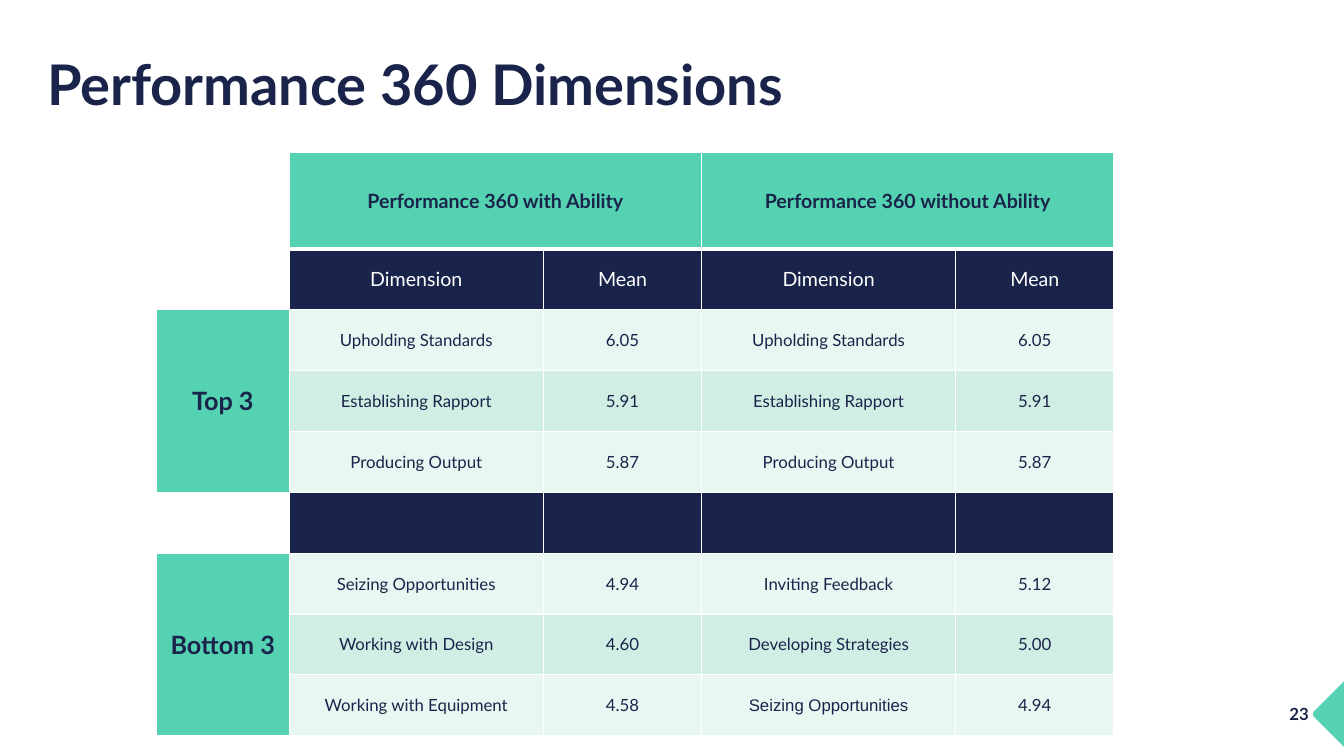
from lxml.etree import SubElement
from pptx import Presentation
from pptx.dml.color import RGBColor
from pptx.enum.text import MSO_ANCHOR, PP_ALIGN
from pptx.oxml.ns import qn
from pptx.util import Inches, Pt

TITLE = "Performance 360 Dimensions"
PAGE_NUMBER = "23"
GROUPS = ["Performance 360 with Ability", "Performance 360 without Ability"]
COLUMN_HEADS = ["Dimension", "Mean"] * 2
RANKINGS = {
    "Top 3": [
        ("Upholding Standards", "6.05", "Upholding Standards", "6.05"),
        ("Establishing Rapport", "5.91", "Establishing Rapport", "5.91"),
        ("Producing Output", "5.87", "Producing Output", "5.87"),
    ],
    "Bottom 3": [
        ("Seizing Opportunities", "4.94", "Inviting Feedback", "5.12"),
        ("Working with Design", "4.60", "Developing Strategies", "5.00"),
        ("Working with Equipment", "4.58", "Seizing Opportunities", "4.94"),
    ],
}
COLORS = {"navy": "1A244A", "mint": "55D2B1", "pale": "E9F7F2",
          "band": "D1EEE4", "white": "FFFFFF"}
FONT = "Lato"
COLUMN_WIDTHS = [1.32, 2.52, 1.57, 2.52, 1.57]
TABLE_LEFT, TABLE_TOP, TABLE_HEIGHT = 1.55, 1.51, 5.79
GROUP_HEIGHT = 0.96
ROW_COUNT = 9
FIRST_RANK_ROW = 2
MARKER_OUTLINE = [(13.33, 7.41), (13.03, 7.11), (13.02, 7.08), (13.03, 7.06), (13.33, 6.76)]


def rgb(name):
    return RGBColor.from_string(COLORS[name])


def write(frame, text, size, color="navy", bold=False, align=PP_ALIGN.CENTER, font=FONT):
    frame.text = text
    paragraph = frame.paragraphs[0]
    paragraph.alignment = align
    for run in paragraph.runs:
        run.font.name = font
        run.font.size = Pt(size)
        run.font.bold = bold
        run.font.color.rgb = rgb(color)
    return paragraph


def add_label(slide, box, text, size, align, anchor):
    label = slide.shapes.add_textbox(*map(Inches, box))
    label.text_frame.word_wrap = True
    label.text_frame.vertical_anchor = anchor
    return write(label.text_frame, text, size, bold=True, align=align)


def add_borders(cell, bottom_width):
    """Draw white cell borders; the XML must precede the cell's fill."""
    properties = cell._tc.get_or_add_tcPr()
    for side, width in (("L", 1), ("R", 1), ("T", 1), ("B", bottom_width)):
        line = SubElement(properties, qn(f"a:ln{side}"), w=str(Pt(width)))
        fill = SubElement(line, qn("a:solidFill"))
        SubElement(fill, qn("a:srgbClr"), val=COLORS["white"])


def fill_cell(cell, color):
    cell.fill.solid()
    cell.fill.fore_color.rgb = rgb(color)


def add_rankings(slide):
    table = slide.shapes.add_table(
        ROW_COUNT, len(COLUMN_WIDTHS), Inches(TABLE_LEFT), Inches(TABLE_TOP),
        Inches(sum(COLUMN_WIDTHS)), Inches(TABLE_HEIGHT)).table
    table.first_row = table.horz_banding = False
    for column, width in zip(table.columns, COLUMN_WIDTHS):
        column.width = Inches(width)
    row_height = (TABLE_HEIGHT - GROUP_HEIGHT) / (ROW_COUNT - 1)
    for r, row in enumerate(table.rows):
        row.height = Inches(row_height if r else GROUP_HEIGHT)
        for c, cell in enumerate(row.cells):
            add_borders(cell, 1 if r else 3)
            fill_cell(cell, "navy" if c else "white")
            cell.vertical_anchor = MSO_ANCHOR.MIDDLE

    for i, group in enumerate(GROUPS):
        left = 1 + 2 * i
        cell = table.cell(0, left)
        cell.merge(table.cell(0, left + 1))
        fill_cell(cell, "mint")
        write(cell.text_frame, group, 14, bold=True)
    for c, head in enumerate(COLUMN_HEADS, 1):
        write(table.cell(1, c).text_frame, head, 14, "white")

    top = FIRST_RANK_ROW
    for rank, rows in RANKINGS.items():
        rank_cell = table.cell(top, 0)
        rank_cell.merge(table.cell(top + len(rows) - 1, 0))
        fill_cell(rank_cell, "mint")
        write(rank_cell.text_frame, rank, 18, bold=True)
        for i, values in enumerate(rows):
            for c, value in enumerate(values, 1):
                cell = table.cell(top + i, c)
                fill_cell(cell, "band" if i % 2 else "pale")
                in_arial = (top + i, c) == (ROW_COUNT - 1, 3)
                write(cell.text_frame, value, 12, font="Arial" if in_arial else FONT)
        top += len(rows) + 1


def add_page_marker(slide):
    start, *others = [(Inches(x), Inches(y)) for x, y in MARKER_OUTLINE]
    builder = slide.shapes.build_freeform(*start)
    builder.add_line_segments(others, close=True)
    marker = builder.convert_to_shape()
    marker.shadow.inherit = False
    marker.fill.solid()
    marker.fill.fore_color.rgb = rgb("mint")
    marker.line.fill.background()
    add_label(slide, (12.38, 6.93, 0.7, 0.3), PAGE_NUMBER, 12, PP_ALIGN.RIGHT, MSO_ANCHOR.TOP)


def main():
    presentation = Presentation()
    presentation.slide_width = Inches(13.33)
    presentation.slide_height = Inches(7.5)
    slide = presentation.slides.add_slide(presentation.slide_layouts[6])
    add_page_marker(slide)
    title = add_label(slide, (0.37, 0.47, 11.5, 0.79), TITLE, 40, PP_ALIGN.LEFT, MSO_ANCHOR.MIDDLE)
    title.line_spacing = 0.9
    add_rankings(slide)
    presentation.save("out.pptx")


if __name__ == "__main__":
    main()
